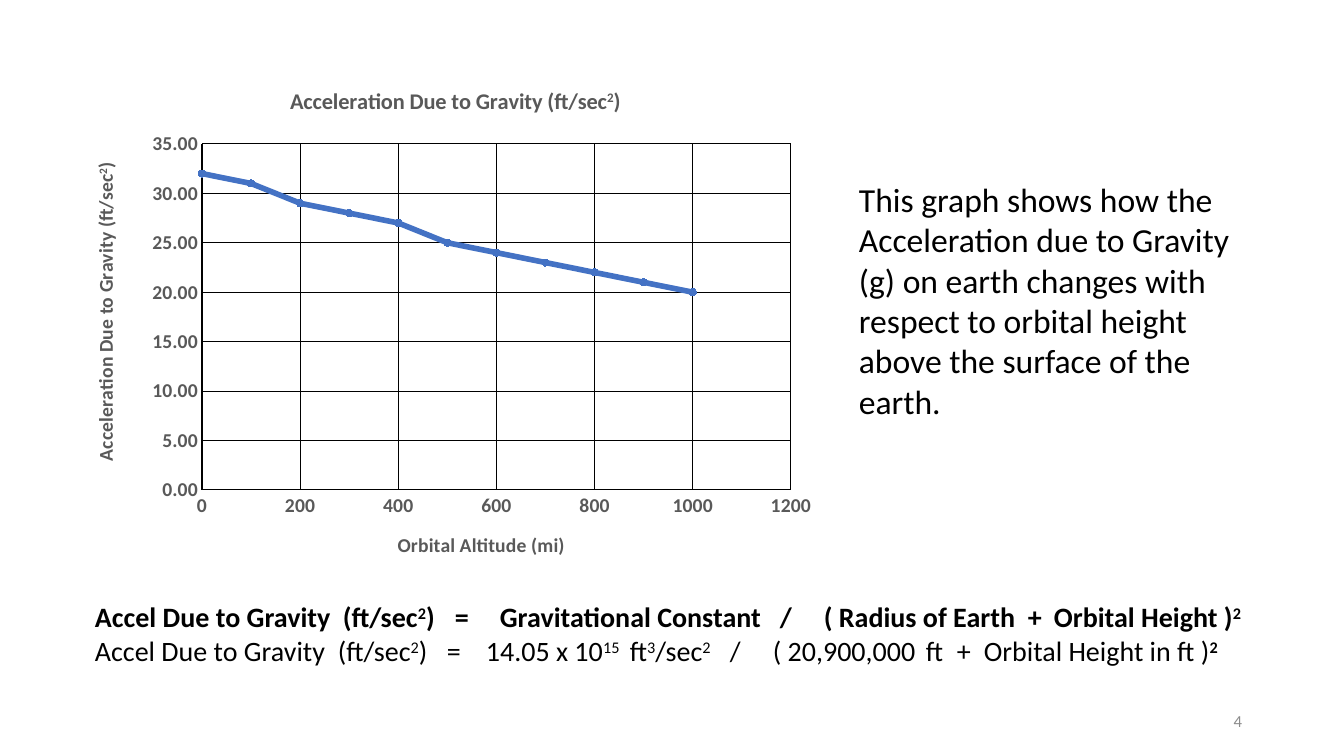
import pptx
import pptx.util
import pptx.chart.data
import pptx.dml.color
import pptx.enum.chart
import pptx.enum.text
import pptx.oxml
import pptx.oxml.ns

PX_PER_INCH = 100.8
FONT = "Calibri"
BLACK, GRAY, PALE, BLUE = "000000", "595959", "8C8C8C", "4472C4"
GRAVITY_TITLE = "Acceleration Due to Gravity (ft/sec^2^)"
GRAVITY = [32, 31, 29, 28, 27, 25, 24, 23, 22, 21, 20]
TEXT_LEFT = 95
CHART_WIDTH, CHART_HEIGHT = 740, 512


def px(length):
    return round(length * 914400 / PX_PER_INCH)


def color(value):
    return pptx.dml.color.RGBColor.from_string(value)


def style_font(font, size, fill, bold=False):
    font.name = FONT
    font.size = pptx.util.Pt(size)
    font.bold = bold
    font.color.rgb = color(fill)


def write(frame, text, size=20, fill=BLACK, bold=False, align=None, bold_end=False):
    para = frame.paragraphs[0]
    if para.runs:
        para = frame.add_paragraph()
    if align is not None:
        para.alignment = align
    pieces = [piece for piece in enumerate(text.split("^")) if piece[1]]
    for index, piece in pieces:
        span = para.add_run()
        span.text = piece
        last = index == pieces[-1][0]
        style_font(span.font, size, fill, bold or (bold_end and last))
        if index % 2:
            span._r.get_or_add_rPr().set("baseline", "30000")
    return para


def add_box(page, left, top, width, height):
    box = page.shapes.add_textbox(px(left), px(top), px(width), px(height))
    box.text_frame.word_wrap = True
    return box.text_frame


def set_tabs(para, stops):
    tabs = pptx.oxml.parse_xml(f"<a:tabLst {pptx.oxml.ns.nsdecls('a')}/>")
    for stop in stops:
        tab = tabs.makeelement(pptx.oxml.ns.qn("a:tab"))
        tab.set("pos", str(px(stop - TEXT_LEFT)))
        tab.set("algn", "l")
        tabs.append(tab)
    para._p.get_or_add_pPr().append(tabs)


def place(element, position, **values):
    for old in element.findall(pptx.oxml.ns.qn("c:layout")):
        element.remove(old)
    parts = "".join(f'<c:{name} val="{value}"/>' for name, value in values.items())
    layout = pptx.oxml.parse_xml(
        f"<c:layout {pptx.oxml.ns.nsdecls('c')}>"
        f"<c:manualLayout>{parts}</c:manualLayout></c:layout>"
    )
    element.insert(position, layout)


def add_title(title, text, size, left, top):
    write(title.text_frame, text, size=size, fill=GRAY, bold=True)
    place(title._element, 1, xMode="edge", yMode="edge",
          x=left / CHART_WIDTH, y=top / CHART_HEIGHT)


def style_line(line, fill, width):
    line.color.rgb = color(fill)
    line.width = pptx.util.Pt(width)


def style_axis(axis, maximum, step, number_format):
    axis.minimum_scale = 0
    axis.maximum_scale = maximum
    axis.major_unit = step
    axis.has_major_gridlines = True
    axis.major_tick_mark = pptx.enum.chart.XL_TICK_MARK.NONE
    axis.minor_tick_mark = pptx.enum.chart.XL_TICK_MARK.NONE
    axis.tick_labels.number_format = number_format
    axis.tick_labels.number_format_is_linked = False
    style_font(axis.tick_labels.font, 14, GRAY, bold=True)
    style_line(axis.format.line, BLACK, 0.75)
    style_line(axis.major_gridlines.format.line, BLACK, 0.75)


def add_gravity_chart(page):
    data = pptx.chart.data.XyChartData()
    points = data.add_series("Series 1")
    for index, value in enumerate(GRAVITY):
        points.add_data_point(index * 100, value)
    chart = page.shapes.add_chart(
        pptx.enum.chart.XL_CHART_TYPE.XY_SCATTER_LINES,
        px(85), px(68), px(CHART_WIDTH), px(CHART_HEIGHT), data,
    ).chart
    chart.has_legend = False
    style_font(chart.font, 10, BLACK)
    chart.plots[0].vary_by_categories = False
    style_axis(chart.category_axis, 1200, 200, "General")
    style_axis(chart.value_axis, 35, 5, "0.00")
    add_title(chart.chart_title, GRAVITY_TITLE, 16, 202, 15)
    add_title(chart.category_axis.axis_title, "Orbital Altitude (mi)", 14, 309, 460)
    gravity_title = chart.value_axis.axis_title
    add_title(gravity_title, GRAVITY_TITLE, 14, 4, 91)
    gravity_title.text_frame._txBody.bodyPr.set("rot", "-5400000")
    gravity_title.text_frame._txBody.bodyPr.set("vert", "horz")
    plot_area = chart._chartSpace.chart.plotArea
    place(plot_area, 0, layoutTarget="inner", xMode="edge", yMode="edge",
          x=117 / CHART_WIDTH, y=76 / CHART_HEIGHT,
          w=589 / CHART_WIDTH, h=346 / CHART_HEIGHT)

    series = chart.plots[0].series[0]
    series.smooth = False
    style_line(series.format.line, BLUE, 4)
    series.marker.style = pptx.enum.chart.XL_MARKER_STYLE.CIRCLE
    series.marker.size = 5
    series.marker.format.fill.solid()
    series.marker.format.fill.fore_color.rgb = color(BLUE)
    style_line(series.marker.format.line, BLUE, 0.75)


def add_formulas(page):
    frame = add_box(page, 85, 595, 1173, 78)
    general = write(
        frame,
        "Accel Due to Gravity\t(ft/sec^2^)\t=\tGravitational Constant\t/"
        "\t( Radius of Earth\t+\tOrbital Height )^2^",
        bold=True,
    )
    set_tabs(general, [343, 455, 500, 780, 824, 1028, 1054])
    numeric = write(
        frame,
        "Accel Due to Gravity\t(ft/sec^2^)\t=\t14.05 x 10^15^\tft^3^/sec^2^\t/"
        "\t( 20,900,000\tft\t+\tOrbital Height in ft )^2^",
        bold_end=True,
    )
    set_tabs(numeric, [338, 447, 486, 630, 730, 773, 926, 957, 984])


def main():
    deck = pptx.Presentation()
    deck.slide_width, deck.slide_height = px(1344), px(756)
    page = deck.slides.add_slide(deck.slide_layouts[6])
    number = add_box(page, 950, 701, 302, 40)
    number.vertical_anchor = pptx.enum.text.MSO_ANCHOR.MIDDLE
    write(number, "4", size=12, fill=PALE, align=pptx.enum.text.PP_ALIGN.RIGHT)
    add_gravity_chart(page)
    add_formulas(page)
    write(
        add_box(page, 849, 174, 410, 254),
        "This graph shows how the Acceleration due to Gravity (g) on earth changes "
        "with respect to orbital height above the surface of the earth.",
        size=24,
    )
    deck.save("out.pptx")


if __name__ == "__main__":
    main()
